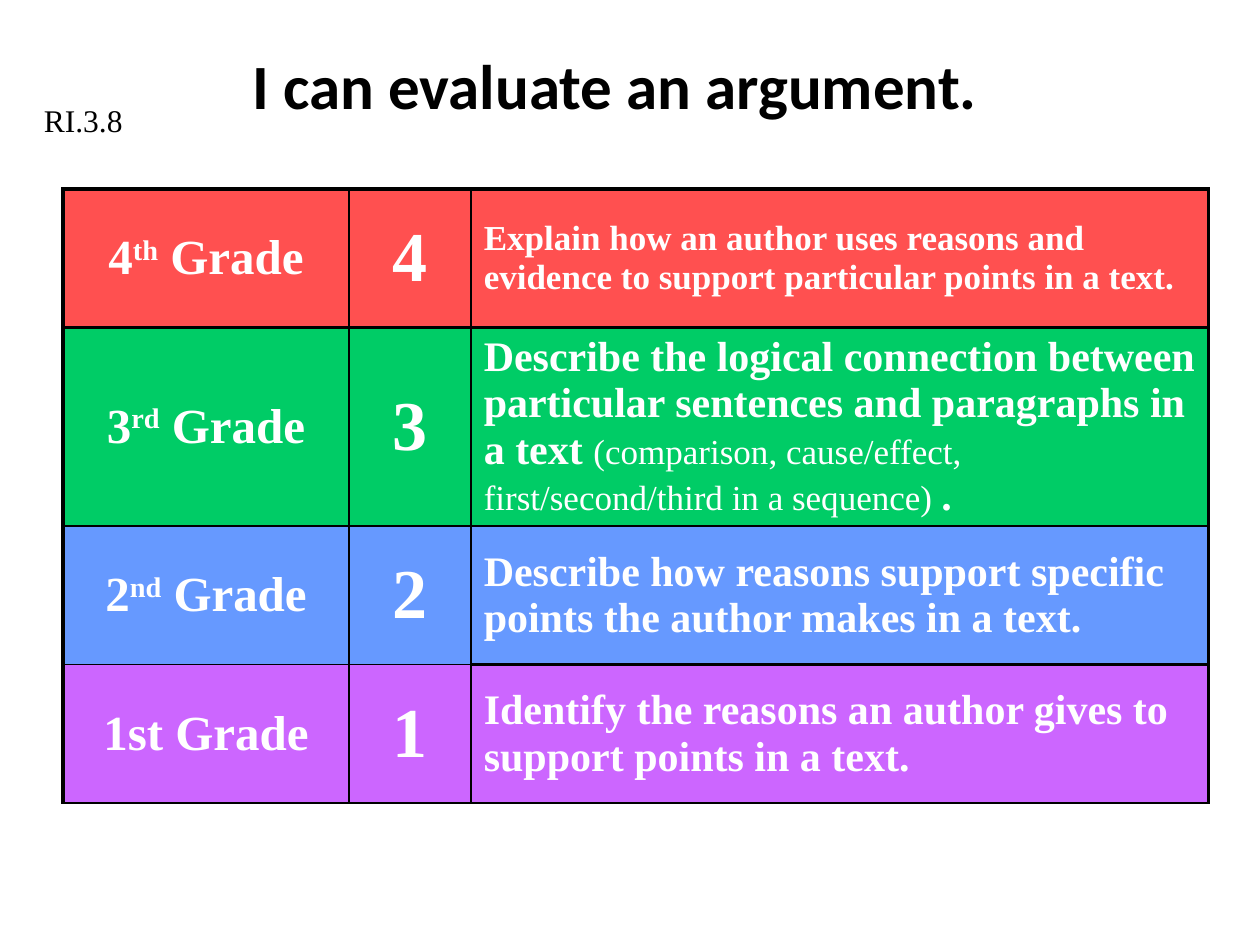
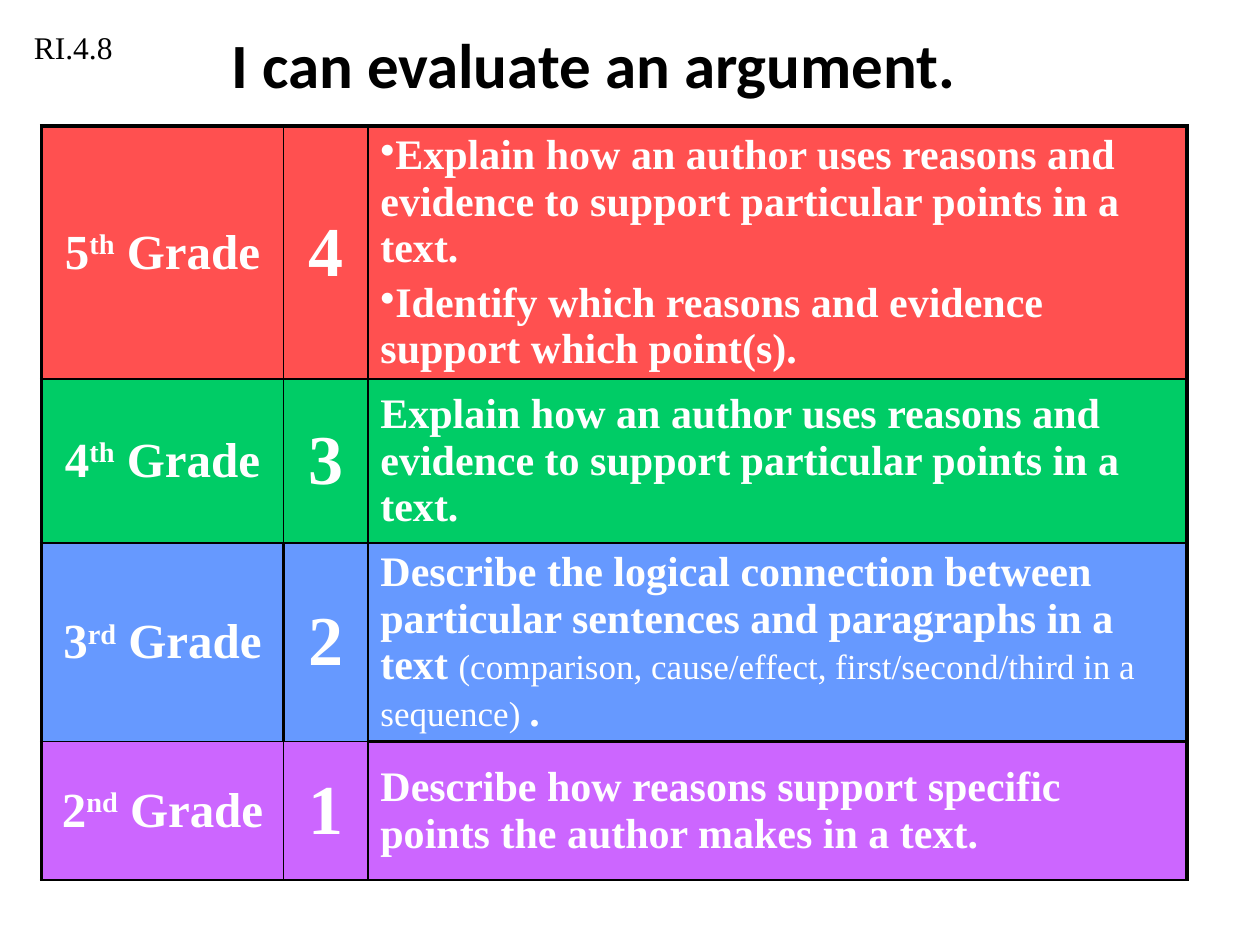
"""Build two grade-level rubric slides about evaluating an argument."""
from lxml.etree import SubElement
from pptx import Presentation
from pptx.dml.color import RGBColor
from pptx.enum.text import MSO_ANCHOR, MSO_AUTO_SIZE, PP_ALIGN
from pptx.oxml.ns import qn
from pptx.util import Inches, Pt

COLORS = {
    "ink": "000000",
    "white": "FFFFFF",
    "levels": ["FF5050", "00CC66", "6699FF", "CC66FF"],
}
TITLE_FONT, BODY_FONT = "Calibri", "Times New Roman"
TITLE = "I can evaluate an argument."
ROW_HEIGHTS = [1.1, 1.3, 1.1, 1.1]
OUTER, MEDIUM, THIN = 2.25, 1.5, 1

EXPLAIN = "Explain how an author uses reasons and evidence to support particular points in a text."
IDENTIFY_WHICH = "Identify which reasons and evidence support which point(s)."
CONNECTION = "Describe the logical connection between particular sentences and paragraphs in a text "
EXAMPLES = "(comparison, cause/effect, first/second/third in a sequence) "
REASONS = "Describe how reasons support specific points the author makes in a text."
IDENTIFY = "Identify the reasons an author gives to support points in a text."

GRADE_1 = [("1st Grade", {})]
GRADE_2, GRADE_3, GRADE_4, GRADE_5 = [
    [(number, {}), (suffix, {"superscript": True}), (" Grade", {})]
    for number, suffix in [("2", "nd"), ("3", "rd"), ("4", "th"), ("5", "th")]
]
LOGICAL_CONNECTION = [(CONNECTION, {}), (EXAMPLES, {"size": 20, "bold": False}), (".", {})]


class RubricDeck:
    """Holds the shared style and the current slide."""

    def __init__(self):
        """Start a 10 by 7.5 inch presentation."""
        self.presentation = Presentation()
        self.presentation.slide_width = Inches(10)
        self.presentation.slide_height = Inches(7.5)
        self.slide = None

    def new_slide(self):
        """Add a title-only slide and make it current."""
        self.slide = self.presentation.slides.add_slide(self.presentation.slide_layouts[5])

    def style(self, paragraph, size, color, font=BODY_FONT, bold=False, align=PP_ALIGN.LEFT):
        """Set the font and alignment of a whole paragraph."""
        paragraph.alignment = align
        paragraph.font.name = font
        paragraph.font.size = Pt(size)
        paragraph.font.bold = bold
        paragraph.font.color.rgb = RGBColor.from_string(color)

    def title(self, left, top):
        """Place the shared title."""
        heading = self.slide.shapes.title
        heading.left, heading.top = Inches(left), Inches(top)
        heading.width, heading.height = Inches(9.42), Inches(1)
        frame = heading.text_frame
        frame.text = TITLE
        frame.vertical_anchor = MSO_ANCHOR.MIDDLE
        self.style(frame.paragraphs[0], 36, COLORS["ink"], TITLE_FONT, True, PP_ALIGN.CENTER)

    def standard(self, code, left, top):
        """Add the code of the learning standard."""
        label = self.slide.shapes.add_textbox(Inches(left), Inches(top), Inches(1.42), Inches(0.4))
        frame = label.text_frame
        frame.word_wrap = True
        frame.auto_size = MSO_AUTO_SIZE.SHAPE_TO_FIT_TEXT
        frame.text = code
        self.style(frame.paragraphs[0], 18, COLORS["ink"])

    def cell_text(self, cell, paragraphs, size, align=PP_ALIGN.LEFT):
        """Fill a cell with paragraphs of runs, bulleted when there are several."""
        cell.vertical_anchor = MSO_ANCHOR.MIDDLE
        frame = cell.text_frame
        for index, runs in enumerate(paragraphs):
            paragraph = frame.add_paragraph() if index else frame.paragraphs[0]
            properties = paragraph._p.get_or_add_pPr()
            spacing = SubElement(properties, qn("a:spcBef"))
            SubElement(spacing, qn("a:spcPct"), val="20000")
            if len(paragraphs) > 1:
                properties.set("marL", "0")
                properties.set("indent", "0")
                SubElement(properties, qn("a:buChar"), char="•")
            self.style(paragraph, size, COLORS["white"], bold=True, align=align)
            for text, changes in runs:
                run = paragraph.add_run()
                run.text = text
                if "size" in changes:
                    run.font.size = Pt(changes["size"])
                if "bold" in changes:
                    run.font.bold = changes["bold"]
                if changes.get("superscript"):
                    run._r.get_or_add_rPr().set("baseline", "30000")

    def borders(self, cell, row, column):
        """Draw the cell edges by their place in the grid."""
        def rule(edge):
            if edge == 0:
                return OUTER
            return MEDIUM if column == 2 or edge in (1, 4) else THIN

        inner = MEDIUM if row == 2 else THIN
        widths = {
            "a:lnL": OUTER if column == 0 else inner,
            "a:lnR": OUTER if column == 2 else inner,
            "a:lnT": rule(row),
            "a:lnB": rule(row + 1),
        }
        properties = cell._tc.get_or_add_tcPr()
        for tag, width in widths.items():
            line = SubElement(properties, qn(tag), w=str(Pt(width)))
            fill = SubElement(line, qn("a:solidFill"))
            SubElement(fill, qn("a:srgbClr"), val=COLORS["ink"])

    def rubric(self, left, top, column_widths, levels):
        """Add the table of grades, scores from 4 down to 1, and skills."""
        rubric = self.slide.shapes.add_table(
            len(levels), len(column_widths), Inches(left), Inches(top),
            Inches(sum(column_widths)), Inches(sum(ROW_HEIGHTS))).table
        rubric.first_row = rubric.horz_banding = False
        for column, width in zip(rubric.columns, column_widths):
            column.width = Inches(width)
        for row, (grade, skills, skill_size) in enumerate(levels):
            rubric.rows[row].height = Inches(ROW_HEIGHTS[row])
            score = [(str(len(levels) - row), {})]
            contents = [
                ([grade], 28, PP_ALIGN.CENTER),
                ([score], 40, PP_ALIGN.CENTER),
                (skills, skill_size, PP_ALIGN.LEFT),
            ]
            for column, content in enumerate(contents):
                cell = rubric.cell(row, column)
                self.cell_text(cell, *content)
                self.borders(cell, row, column)
                cell.fill.solid()
                cell.fill.fore_color.rgb = RGBColor.from_string(COLORS["levels"][row])


def main():
    """Build and save both slides."""
    deck = RubricDeck()

    deck.new_slide()
    deck.title(0.17, 0.17)
    deck.rubric(0.5, 1.5, [2.27, 0.97, 5.85], [
        (GRADE_4, [[(EXPLAIN, {})]], 20),
        (GRADE_3, [LOGICAL_CONNECTION], 24),
        (GRADE_2, [[(REASONS, {})]], 24),
        (GRADE_1, [[(IDENTIFY, {})]], 24),
    ])
    deck.standard("RI.3.8", 0.25, 0.75)

    deck.new_slide()
    deck.title(0, 0)
    deck.rubric(0.33, 1, [1.92, 0.67, 6.5], [
        (GRADE_5, [[(EXPLAIN, {})], [(IDENTIFY_WHICH, {})]], 24),
        (GRADE_4, [[(EXPLAIN, {})]], 24),
        (GRADE_3, [LOGICAL_CONNECTION], 24),
        (GRADE_2, [[(REASONS, {})]], 24),
    ])
    deck.standard("RI.4.8", 0.17, 0.17)

    deck.presentation.save("out.pptx")


if __name__ == "__main__":
    main()
